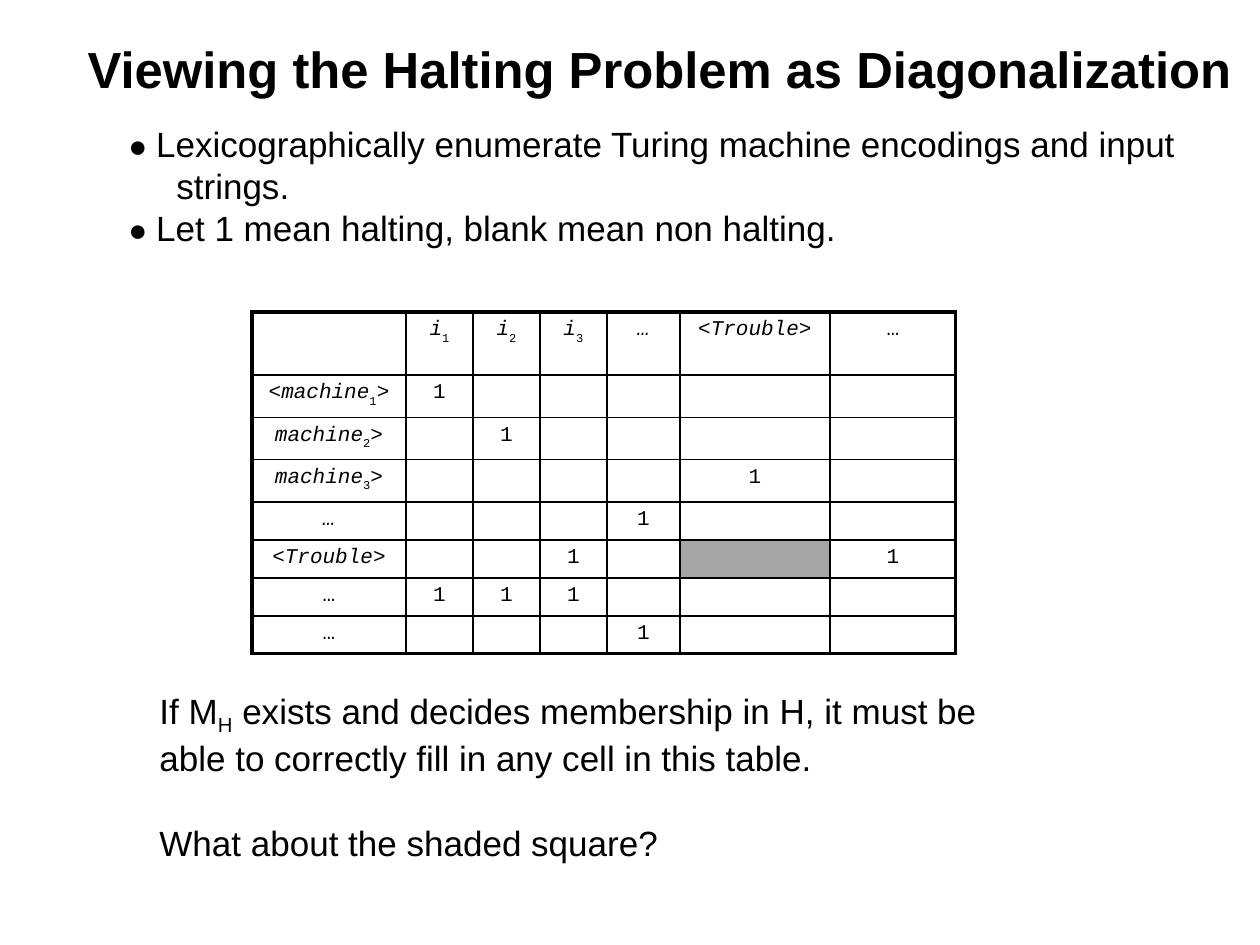
from lxml import etree
from pptx import Presentation
from pptx.dml.color import RGBColor
from pptx.enum.text import MSO_ANCHOR, PP_ALIGN
from pptx.oxml.ns import qn
from pptx.util import Emu, Pt

CENTER, LEFT = PP_ALIGN.CENTER, PP_ALIGN.LEFT
TOP, MIDDLE = MSO_ANCHOR.TOP, MSO_ANCHOR.MIDDLE
BLACK = RGBColor(0x00, 0x00, 0x00)
SHADE = RGBColor(0xA6, 0xA6, 0xA6)
ITALIC = {"italic": True}
SUBSCRIPT = {"baseline": -30}


def px(length):
    return Emu(round(length * 914400 / 126))


def write(paragraph, text, font="Arial", size=20, bold=False, italic=False,
          baseline=0):
    run = paragraph.add_run()
    run.text = text
    run.font.name = font
    run.font.size = Pt(size)
    run.font.bold = bold
    run.font.italic = italic
    run.font.color.rgb = BLACK
    if baseline:
        run.font._element.set("baseline", str(baseline * 1000))


class SlideBuilder:
    table_font = "Courier New"
    table_size = 12
    thin, thick = 1, 2

    def __init__(self, slide):
        self.slide = slide

    def text_box(self, left, top, width, height, paragraphs, align=LEFT,
                 anchor=TOP, hanging=0, gap=0):
        """Each paragraph is a list of (text, format) runs."""
        box = self.slide.shapes.add_textbox(*map(px, (left, top, width, height)))
        frame = box.text_frame
        frame.word_wrap = True
        frame.vertical_anchor = anchor
        for index, runs in enumerate(paragraphs):
            paragraph = frame.add_paragraph() if index else frame.paragraphs[0]
            paragraph.alignment = align
            if hanging:
                properties = paragraph._p.get_or_add_pPr()
                properties.set("marL", str(px(hanging)))
                properties.set("indent", str(-px(hanging)))
            if index and gap:
                paragraph.space_before = Pt(gap)
            for text, style in runs:
                write(paragraph, text, **style)

    def border(self, cell, side, points):
        line = etree.SubElement(cell._tc.get_or_add_tcPr(), qn(f"a:ln{side}"),
                                w=str(Pt(points)))
        fill = etree.SubElement(line, qn("a:solidFill"))
        etree.SubElement(fill, qn("a:srgbClr"), val=str(BLACK))

    def table(self, left, top, widths, heights, contents, shaded):
        """contents maps (row, column) to a list of (text, format) runs."""
        last_row, last_column = len(heights) - 1, len(widths) - 1
        grid = self.slide.shapes.add_table(
            len(heights), len(widths), px(left), px(top),
            px(sum(widths)), px(sum(heights))).table
        grid.first_row = grid.horz_banding = False
        for column, width in zip(grid.columns, widths):
            column.width = px(width)
        for row, height in zip(grid.rows, heights):
            row.height = px(height)
        for r in range(len(heights)):
            for c in range(len(widths)):
                cell = grid.cell(r, c)
                # The outer frame is thicker than the inner grid
                outer = {"L": c == 0, "R": c == last_column,
                         "T": r == 0, "B": r == last_row}
                for side, is_outer in outer.items():
                    self.border(cell, side, self.thick if is_outer else self.thin)
                if (r, c) == shaded:
                    cell.fill.solid()
                    cell.fill.fore_color.rgb = SHADE
                else:
                    cell.fill.background()
                self.fill_cell(cell, contents.get((r, c), []))

    def fill_cell(self, cell, runs):
        paragraph = cell.text_frame.paragraphs[0]
        paragraph.alignment = CENTER
        for text, style in runs:
            write(paragraph, text, font=self.table_font, size=self.table_size,
                  **style)
        if not runs:  # keeps blank cells as low as the filled ones
            etree.SubElement(paragraph._p, qn("a:endParaRPr"),
                             sz=str(self.table_size * 100))


def halting_table():
    column_heads = [[("i", ITALIC), (str(n), SUBSCRIPT)] for n in (1, 2, 3)]
    column_heads += [
        [("…", ITALIC)],
        [("<", {}), ("Trouble", ITALIC), (">", {})],
        [("…", {})],
    ]
    row_heads = [[(name, ITALIC), (str(n), SUBSCRIPT), (">", {})]
                 for n, name in enumerate(("<machine", "machine", "machine"), 1)]
    row_heads += [
        [("…", ITALIC)],
        [("<Trouble", ITALIC), (">", {})],
        [("…", {})],
        [("…", {})],
    ]
    halting = [(1, 1), (2, 2), (3, 5), (4, 4), (5, 3), (5, 6),
               (6, 1), (6, 2), (6, 3), (7, 4)]
    contents = {(0, c): head for c, head in enumerate(column_heads, 1)}
    contents.update({(r, 0): head for r, head in enumerate(row_heads, 1)})
    contents.update({place: [("1", {})] for place in halting})
    return contents


def main():
    deck = Presentation()
    deck.slide_width, deck.slide_height = px(1260), px(945)
    builder = SlideBuilder(deck.slides.add_slide(deck.slide_layouts[6]))

    # Setup of the argument
    points = ["Lexicographically enumerate Turing machine encodings and input strings.",
              "Let 1 mean halting, blank mean non halting."]
    builder.text_box(116, 116, 1113, 522,
                     [[("● ", {"size": 18}), (point, {})] for point in points],
                     hanging=48)

    # Title
    builder.text_box(53, 10, 1229, 116,
                     [[("Viewing the Halting Problem as Diagonalization ",
                        {"size": 29, "bold": True})]],
                     align=CENTER, anchor=MIDDLE)

    # Machines against inputs
    builder.table(252, 312, widths=[154, 67, 67, 67, 73, 150, 126],
                  heights=[63] + [38] * 7, contents=halting_table(),
                  shaded=(5, 5))

    # Closing question
    builder.text_box(147, 683, 903, 183, [
        [("If M", {}), ("H", {"baseline": -25}),
         (" exists and decides membership in H, it must be able to correctly "
          "fill in any cell in this table.", {})],
        [("What about the shaded square?", {})],
    ], gap=24)

    deck.save("out.pptx")


if __name__ == "__main__":
    main()
